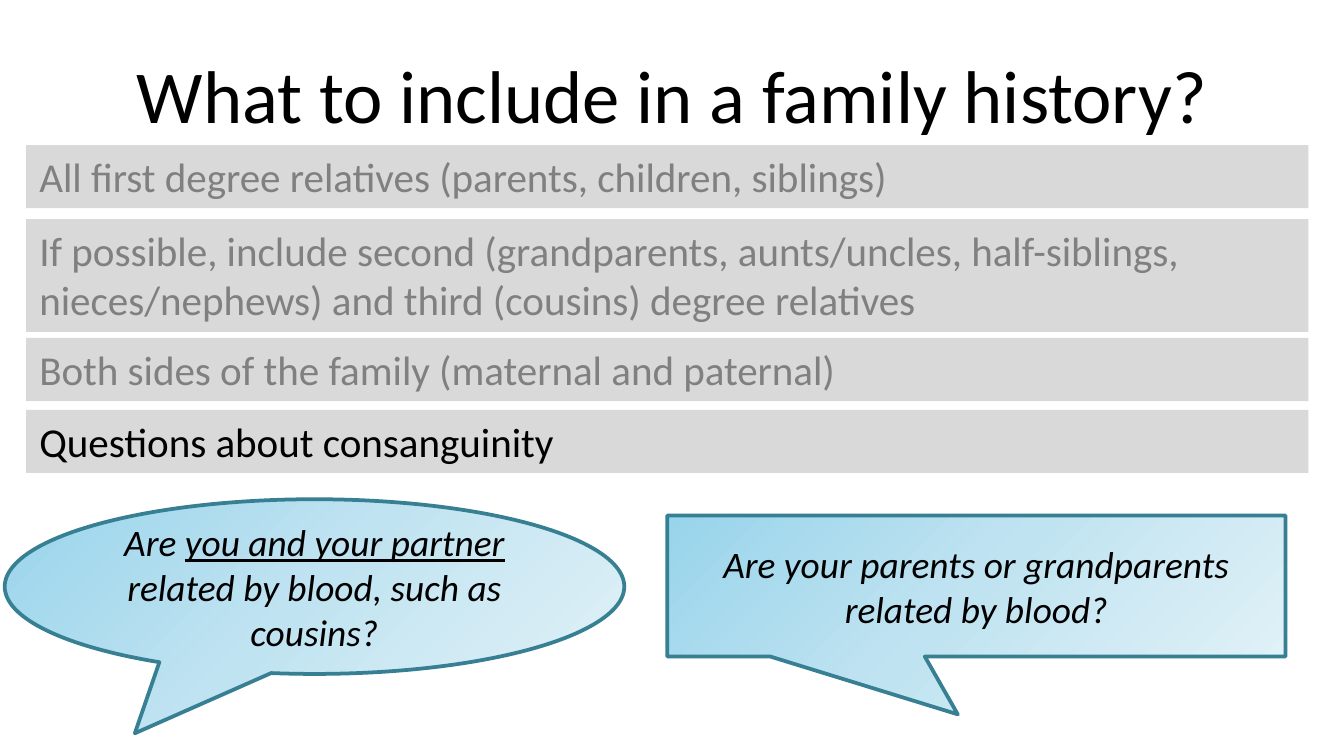
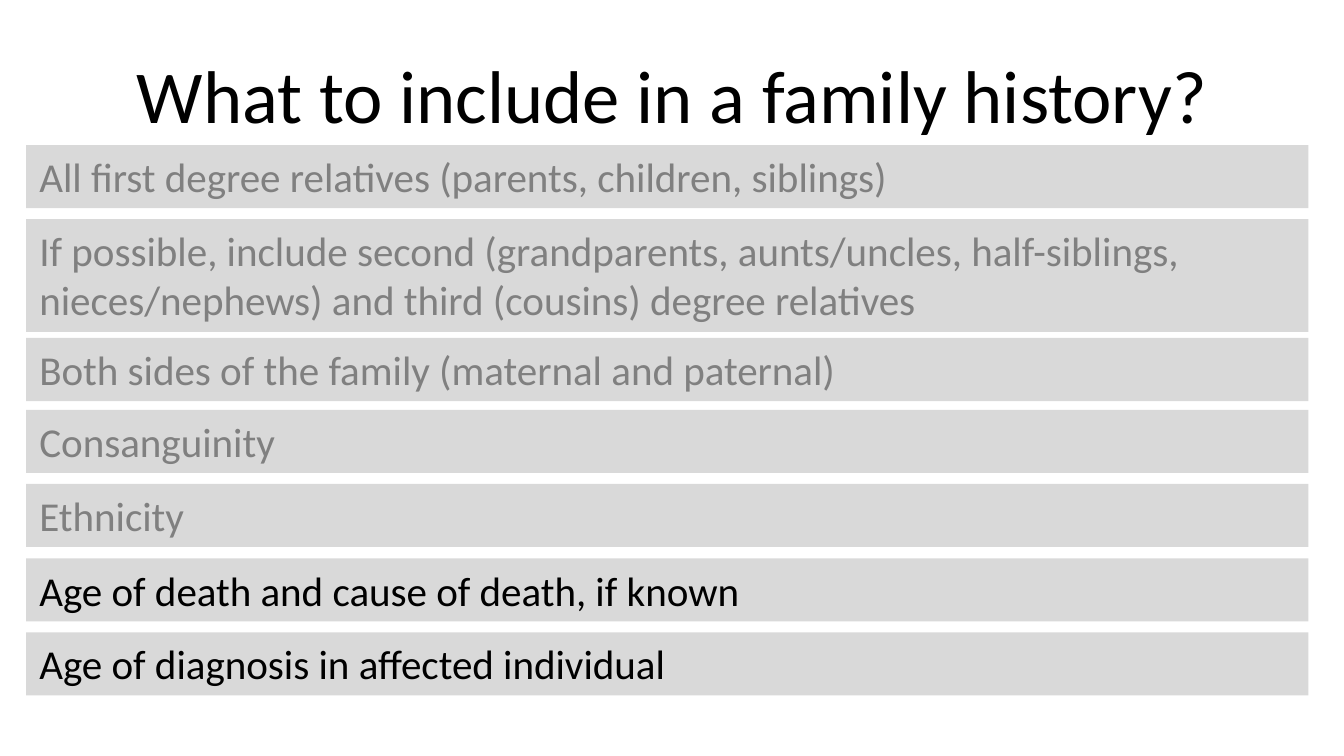
from copy import deepcopy

from pptx import Presentation
from pptx.dml.color import RGBColor
from pptx.enum import shapes, text
from pptx.oxml.ns import qn
from pptx.util import Pt

PX = 4572  # 200 px to the inch
FONT = "Calibri"
BLACK, GREY, BAR = "000000", "808080", "D9D9D9"
OUTLINE = "377F92"
GRADIENT = [(0, "98D4EB"), (0.5, "C0E3F1"), (1, "E0F1F7")]

TITLE = "What to include in a family history?"
TITLE_BOX = (100, 45, 1800, 188)
BARS_BOX = (39, 216, 1908, 819)
BAR_TOPS = [0, 110, 287, 394, 504, 615, 725]
ONE_LINE, TWO_LINES = 94, 168
TWO_LINE_BAR = 1

RELATIVES = [
    "All first degree relatives (parents, children, siblings)",
    "If possible, include second (grandparents, aunts/uncles, half-siblings, "
    "nieces/nephews) and third (cousins) degree relatives",
    "Both sides of the family (maternal and paternal)",
]


def rgb(value):
    return RGBColor.from_string(value)


def emu(box):
    return [v * PX for v in box]


def add_run(p, words, size, color, italic=None, underline=None):
    r = p.add_run()
    r.text = words
    r.font.name = FONT
    r.font.size = Pt(size)
    r.font.color.rgb = rgb(color)
    r.font.italic = italic
    r.font.underline = underline


def add_title(slide, box):
    sp = slide.shapes.title
    sp.left, sp.top, sp.width, sp.height = emu(box)
    tf = sp.text_frame
    tf.auto_size = text.MSO_AUTO_SIZE.NONE
    tf.vertical_anchor = text.MSO_ANCHOR.MIDDLE
    p = tf.paragraphs[0]
    p.alignment = text.PP_ALIGN.CENTER
    add_run(p, TITLE, 40, BLACK)


def add_bars(slide, box, done, current):
    """Grey bars: points already covered are dimmed, current ones are black."""
    x, y, w, _ = box
    points = [(t, GREY) for t in done] + [(t, BLACK) for t in current]
    for i, ((words, color), top) in enumerate(zip(points, BAR_TOPS)):
        h = TWO_LINES if i == TWO_LINE_BAR else ONE_LINE
        sp = slide.shapes.add_shape(shapes.MSO_SHAPE.RECTANGLE, *emu((x, y + top, w, h)))
        sp.shadow.inherit = False
        sp.fill.solid()
        sp.fill.fore_color.rgb = rgb(BAR)
        sp.line.fill.background()
        tf = sp.text_frame
        tf.word_wrap = True
        tf.auto_size = text.MSO_AUTO_SIZE.SHAPE_TO_FIT_TEXT
        tf.vertical_anchor = text.MSO_ANCHOR.TOP
        p = tf.paragraphs[0]
        p.alignment = text.PP_ALIGN.LEFT
        add_run(p, words, 22, color)


def fill_gradient(sp):
    sp.fill.gradient()
    sp.fill.gradient_angle = 315  # counter-clockwise: towards bottom right
    stops = sp._element.spPr.find(qn("a:gradFill")).find(qn("a:gsLst"))
    stops.insert(1, deepcopy(stops[0]))
    for stop, (position, color) in zip(sp.fill.gradient_stops, GRADIENT):
        stop.position = position
        stop.color.rgb = rgb(color)


def add_callout(slide, kind, box, tip, runs):
    """Speech bubble; tip is the pointer's offset from the centre."""
    sp = slide.shapes.add_shape(kind, *emu(box))
    sp.shadow.inherit = False
    sp.adjustments[0], sp.adjustments[1] = tip
    fill_gradient(sp)
    sp.line.color.rgb = rgb(OUTLINE)
    sp.line.width = Pt(2)
    tf = sp.text_frame
    tf.word_wrap = True
    tf.vertical_anchor = text.MSO_ANCHOR.MIDDLE
    p = tf.paragraphs[0]
    p.alignment = text.PP_ALIGN.CENTER
    for words, underline in runs:
        add_run(p, words, 20, BLACK, italic=True, underline=underline)


def history_slide(prs, done, current):
    slide = prs.slides.add_slide(prs.slide_layouts[5])
    add_title(slide, TITLE_BOX)
    add_bars(slide, BARS_BOX, done, current)
    return slide


def main():
    prs = Presentation()
    prs.slide_width, prs.slide_height = emu((2000, 1125))

    # Consanguinity questions
    slide = history_slide(prs, RELATIVES, ["Questions about consanguinity"])
    add_callout(slide, shapes.MSO_SHAPE.RECTANGULAR_CALLOUT,
                (993, 767, 920, 210), (-0.03, 0.91),
                [("Are your parents or grandparents related by blood?", False)])
    add_callout(slide, shapes.MSO_SHAPE.OVAL_CALLOUT,
                (7, 743, 922, 260), (-0.29, 0.84),
                [("Are ", False), ("you and your partner ", True),
                 ("related by blood, such as cousins?", False)])

    # Ages and causes
    history_slide(prs, RELATIVES + ["Consanguinity", "Ethnicity"],
                  ["Age of death and cause of death, if known",
                   "Age of diagnosis in affected individual"])

    prs.save("out.pptx")


if __name__ == "__main__":
    main()
